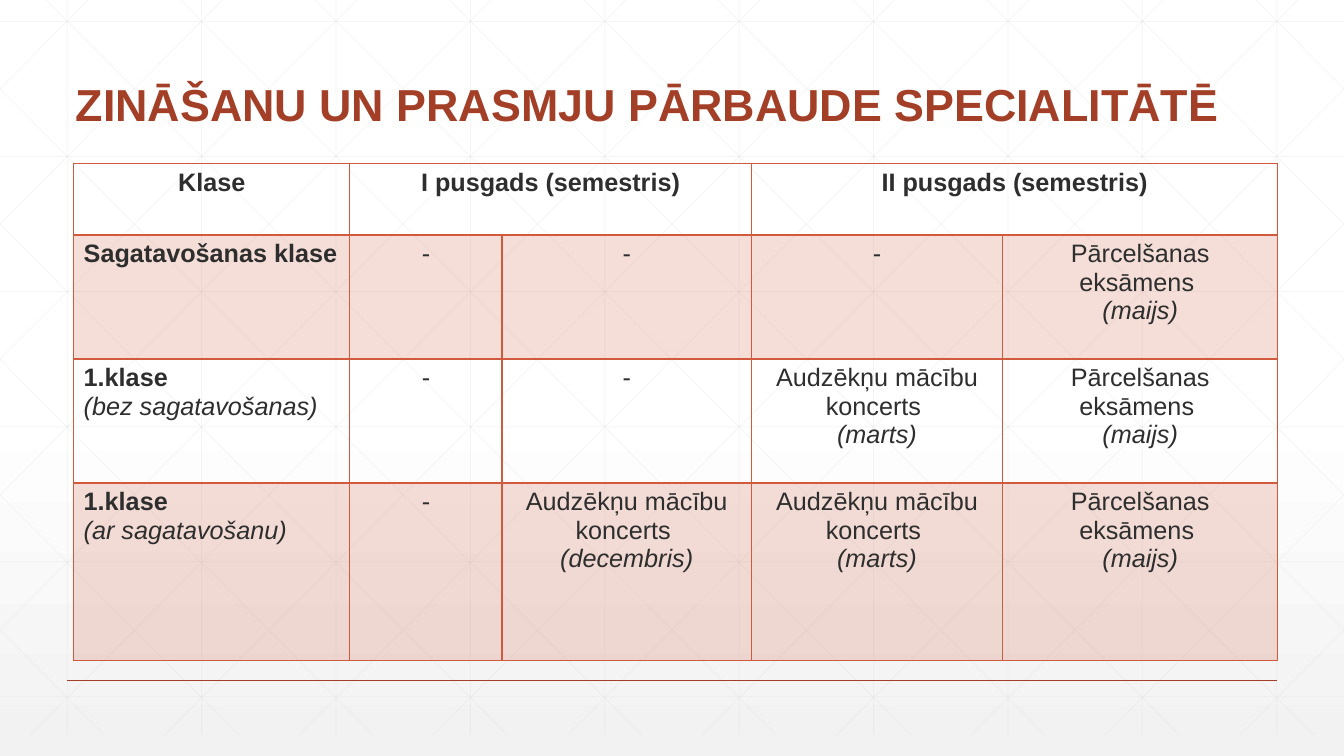
import copy
from dataclasses import dataclass

import pptx
import pptx.dml.color
import pptx.enum.shapes
import pptx.enum.text
import pptx.oxml
import pptx.oxml.ns
import pptx.util

# The slide is a grid of square units: 100 columns by 56.25 rows.
COLUMNS, ROWS = 100, 56.25
UNIT = 13.333 / COLUMNS
PITCH = 10
PATTERN_BOTTOM = 54.7
FONT = "Arial"
RUST, CORAL, INK, PALE = "A43F27", "D15A3E", "2D2E2D", "D9D9D9"
ALIGN = pptx.enum.text.PP_ALIGN


@dataclass
class Line:
    x1: float
    y1: float
    x2: float
    y2: float


@dataclass
class Entry:
    text: str
    note: str = ""
    bold: bool = False
    centred: bool = True
    span: int = 1


def units(count: float) -> pptx.util.Length:
    return pptx.util.Inches(count * UNIT)


def colour(value: str) -> pptx.dml.color.RGBColor:
    return pptx.dml.color.RGBColor.from_string(value)


def set_opacity(element, percent: int) -> None:
    for node in element.iter(pptx.oxml.ns.qn("a:srgbClr")):
        alpha = node.makeelement(pptx.oxml.ns.qn("a:alpha"), {"val": str(percent * 1000)})
        node.append(alpha)


def paint_background(slide) -> None:
    fill = slide.background.fill
    fill.gradient()
    fill.gradient_angle = 270
    stop_list = slide.element.find(".//" + pptx.oxml.ns.qn("a:gsLst"))
    stop_list.append(copy.deepcopy(stop_list[-1]))
    for stop, value, position in zip(
        fill.gradient_stops, ("FFFFFF", "FFFFFF", "F2F2F2"), (0, 0.53, 1)
    ):
        stop.color.rgb = colour(value)
        stop.position = position


def draw_line(slide, line: Line, value: str, width: float, opacity: int = 100) -> None:
    connector = slide.shapes.add_connector(
        pptx.enum.shapes.MSO_CONNECTOR.STRAIGHT,
        units(line.x1), units(line.y1), units(line.x2), units(line.y2),
    )
    connector.line.color.rgb = colour(value)
    connector.line.width = pptx.util.Pt(width)
    properties = connector.element.spPr
    if opacity < 100:
        set_opacity(properties, opacity)
    properties.append(properties.makeelement(pptx.oxml.ns.qn("a:effectLst"), {}))


def pattern_lines() -> list[Line]:
    """Upright, level and mirrored diagonal lines, cut at the slide's edges."""
    lines = [Line(x, 0, x, PATTERN_BOTTOM) for x in range(5, COLUMNS, PITCH)]
    lines += [Line(0, 1.6 + 10.05 * i, COLUMNS, 1.6 + 10.05 * i) for i in range(6)]
    slope = 1.007
    for index in range(-5, 10):
        start = 3.44 + PITCH * index
        left = max(start, 0)
        right = min(start + PATTERN_BOTTOM / slope, COLUMNS)
        top, bottom = (left - start) * slope, (right - start) * slope
        lines.append(Line(left, top, right, bottom))
        lines.append(Line(COLUMNS - left, top, COLUMNS - right, bottom))
    return lines


def format_run(run, size: float, value: str, bold: bool, italic: bool = False) -> None:
    run.font.name = FONT
    run.font.size = pptx.util.Pt(size)
    run.font.color.rgb = colour(value)
    run.font.bold = bold
    run.font.italic = italic


def place_title(slide, text: str) -> None:
    title = slide.shapes.title
    title.left, title.top = units(4.88), units(4.13)
    title.width, title.height = units(90.23), units(6)
    frame = title.text_frame
    frame.text = text
    frame.word_wrap = True
    frame.auto_size = pptx.enum.text.MSO_AUTO_SIZE.NONE
    frame.vertical_anchor = pptx.enum.text.MSO_ANCHOR.BOTTOM
    para = frame.paragraphs[0]
    para.alignment = ALIGN.LEFT
    para.line_spacing = 0.9
    format_run(para.runs[0], 32, RUST, True)
    slide.shapes.element.append(title.element)


def set_borders(cell, widths: dict[str, float]) -> None:
    properties = cell._tc.get_or_add_tcPr()
    for side, width in widths.items():
        properties.append(pptx.oxml.parse_xml(
            f'<a:ln{side} {pptx.oxml.ns.nsdecls("a")} w="{pptx.util.Pt(width)}">'
            f'<a:solidFill><a:srgbClr val="{CORAL}"/></a:solidFill></a:ln{side}>'
        ))


def write_entry(cell, entry: Entry) -> None:
    cell.text_frame.text = "\n".join(filter(None, (entry.text, entry.note)))
    for index, para in enumerate(cell.text_frame.paragraphs):
        is_note = index > 0
        para.alignment = ALIGN.CENTER if entry.centred else ALIGN.LEFT
        format_run(para.runs[0], 18, INK, entry.bold and not is_note, is_note)


def draw_table(slide, rows: list[list[Entry]], widths: list[float], heights: list[float]) -> None:
    table = slide.shapes.add_table(
        len(heights), len(widths), units(5.48), units(12.15),
        units(sum(widths)), units(sum(heights)),
    ).table
    for column, width in zip(table.columns, widths):
        column.width = units(width)
    for row, height in zip(table.rows, heights):
        row.height = units(height)
    for i in range(len(heights)):
        for j in range(len(widths)):
            cell = table.cell(i, j)
            set_borders(cell, {"L": 1, "R": 1, "T": 2 if i == 1 else 1, "B": 2 if i == 0 else 1})
            if i % 2:
                cell.fill.solid()
                cell.fill.fore_color.rgb = colour(CORAL)
                set_opacity(cell._tc.tcPr.find(pptx.oxml.ns.qn("a:solidFill")), 20)
            else:
                cell.fill.background()
    for i, entries in enumerate(rows):
        j = 0
        for entry in entries:
            cell = table.cell(i, j)
            if entry.span > 1:
                cell.merge(table.cell(i, j + entry.span - 1))
            write_entry(cell, entry)
            j += entry.span


def main() -> None:
    deck = pptx.Presentation()
    deck.slide_width, deck.slide_height = units(COLUMNS), units(ROWS)
    slide = deck.slides.add_slide(deck.slide_layouts[5])
    paint_background(slide)
    for line in pattern_lines():
        draw_line(slide, line, PALE, 0.5, 25)
    draw_line(slide, Line(5, 50.62, 95, 50.62), RUST, 1)
    place_title(slide, "ZINĀŠANU UN PRASMJU PĀRBAUDE SPECIALITĀTĒ")

    none = Entry("-")
    concert = "Audzēkņu mācību koncerts "
    march = Entry(concert, "(marts)")
    exam = Entry("Pārcelšanas eksāmens ", "(maijs)")
    rows = [
        [
            Entry("Klase", bold=True),
            Entry("I pusgads (semestris)", bold=True, span=2),
            Entry("II pusgads (semestris)", bold=True, span=2),
        ],
        [Entry("Sagatavošanas klase", bold=True, centred=False), none, none, none, exam],
        [Entry("1.klase", "(bez sagatavošanas)", True, False), none, none, march, exam],
        [
            Entry("1.klase", "(ar sagatavošanu)", True, False),
            none, Entry(concert, "(decembris)"), march, exam,
        ],
    ]
    draw_table(slide, rows, [20.55, 11.33, 18.55, 18.7, 20.47], [5.33, 9.23, 9.23, 13.2])
    deck.save("out.pptx")


if __name__ == "__main__":
    main()
